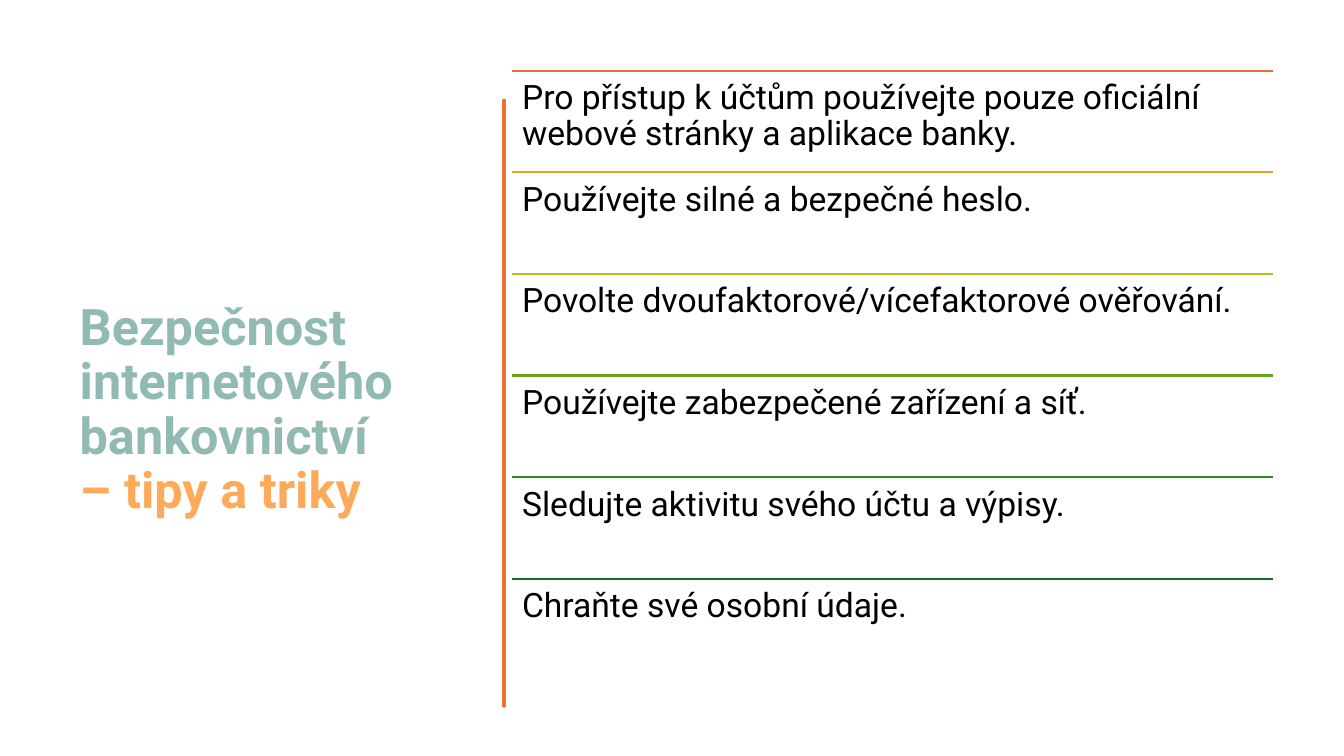
from dataclasses import dataclass

from lxml.etree import SubElement
from pptx import Presentation
from pptx.dml.color import RGBColor
from pptx.enum.shapes import MSO_CONNECTOR
from pptx.enum.text import MSO_ANCHOR, MSO_AUTO_SIZE, PP_ALIGN
from pptx.oxml.ns import qn
from pptx.util import Inches, Pt


@dataclass(frozen=True)
class Theme:
    """Fonts, colours and sizes of the slide."""
    font: str = "Roboto"
    title_size: int = 36
    tip_size: int = 24
    rule_width: float = 1.5
    bar_width: float = 3.25
    line_spacing: float = 0.9
    teal: str = "92BAB5"
    amber: str = "FFAA5A"
    orange: str = "E97132"
    black: str = "000000"


THEME = Theme()

TIPS = [
    ("Pro přístup k účtům používejte pouze oficiální webové stránky a aplikace banky.", "E97132"),
    ("Používejte silné a bezpečné heslo.", "E0A61D"),
    ("Povolte dvoufaktorové/vícefaktorové ověřování.", "B7C11E"),
    ("Používejte zabezpečené zařízení a síť.", "6BA31D"),
    ("Sledujte aktivitu svého účtu a výpisy.", "34861C"),
    ("Chraňte své osobní údaje.", "196B24"),
]
TIPS_LEFT, TIPS_TOP = Inches(5.08), Inches(0.7)
TIPS_WIDTH, TIPS_HEIGHT = Inches(7.55), Inches(6.05)

BAR_RIGHT = [
    (4.75, 0.84), (4.76, 1.15), (4.75, 1.46), (4.74, 1.75), (4.75, 2.26),
    (4.75, 2.94), (4.76, 3.3), (4.75, 3.56), (4.74, 3.75), (4.76, 4.1),
    (4.75, 4.36), (4.73, 4.7), (4.75, 5.1), (4.77, 5.5), (4.75, 5.84),
    (4.74, 6.1), (4.75, 6.76),
]
BAR_LEFT = [
    (4.73, 6.76), (4.72, 6.35), (4.73, 6.13), (4.74, 5.85), (4.73, 5.57),
    (4.73, 4.77), (4.72, 4.5), (4.73, 4.15), (4.73, 3.35), (4.73, 2.5),
    (4.74, 2.15), (4.73, 1.81), (4.72, 1.6), (4.74, 1.1), (4.73, 0.84),
]


def style_span(span, size, color, bold=False):
    """Format one run of text."""
    span.font.name = THEME.font
    span.font.size = Pt(size)
    span.font.bold = bold
    span.font.color.rgb = RGBColor.from_string(color)


def add_title(page):
    """Fill the title placeholder with its two-coloured heading."""
    title = page.shapes.title
    title.left, title.top = Inches(0.69), Inches(0.7)
    title.width, title.height = Inches(3.74), Inches(6.11)
    frame = title.text_frame
    frame.word_wrap = True
    frame.auto_size = MSO_AUTO_SIZE.NONE
    frame.vertical_anchor = MSO_ANCHOR.MIDDLE
    frame.margin_top = Inches(0.69)
    frame.text = "Bezpečnost internetového bankovnictví\v– tipy a triky"
    para = frame.paragraphs[0]
    para.alignment = PP_ALIGN.LEFT
    para.line_spacing = THEME.line_spacing
    for span, color in zip(para.runs, (THEME.teal, THEME.amber)):
        style_span(span, THEME.title_size, color, bold=True)


def add_brush_bar(page):
    """Draw the uneven vertical bar beside the title."""
    start, *others = BAR_RIGHT + BAR_LEFT
    builder = page.shapes.build_freeform(*start, scale=Inches(1))
    builder.add_line_segments(others, close=True)
    bar = builder.convert_to_shape()
    bar.shadow.inherit = False
    color = RGBColor.from_string(THEME.orange)
    bar.fill.solid()
    bar.fill.fore_color.rgb = color
    bar.line.color.rgb = color
    bar.line.width = Pt(THEME.bar_width)
    SubElement(bar.line._get_or_add_ln(), qn("a:round"))


def add_rule(page, top, color):
    """Draw the horizontal line above a tip."""
    rule = page.shapes.add_connector(
        MSO_CONNECTOR.STRAIGHT, TIPS_LEFT, top, TIPS_LEFT + TIPS_WIDTH, top)
    rule.line.color.rgb = RGBColor.from_string(color)
    rule.line.width = Pt(THEME.rule_width)
    SubElement(rule._element.spPr, qn("a:effectLst"))


def add_tip(page, top, height, text):
    """Write one tip in its row."""
    box = page.shapes.add_textbox(TIPS_LEFT, top, TIPS_WIDTH, height)
    frame = box.text_frame
    frame.word_wrap = True
    frame.margin_left = frame.margin_right = Inches(0.1)
    frame.margin_top = frame.margin_bottom = Inches(0.1)
    frame.text = text
    para = frame.paragraphs[0]
    para.line_spacing = THEME.line_spacing
    style_span(para.runs[0], THEME.tip_size, THEME.black)


def main():
    """Build the slide and save the deck."""
    deck = Presentation()
    deck.slide_width, deck.slide_height = Inches(13.33), Inches(7.5)
    page = deck.slides.add_slide(deck.slide_layouts.get_by_name("Title Only"))
    add_title(page)
    add_brush_bar(page)
    row_height = TIPS_HEIGHT // len(TIPS)
    for row, (text, color) in enumerate(TIPS):
        top = TIPS_TOP + row * row_height
        add_rule(page, top, color)
        add_tip(page, top, row_height, text)
    deck.save("out.pptx")


if __name__ == "__main__":
    main()
